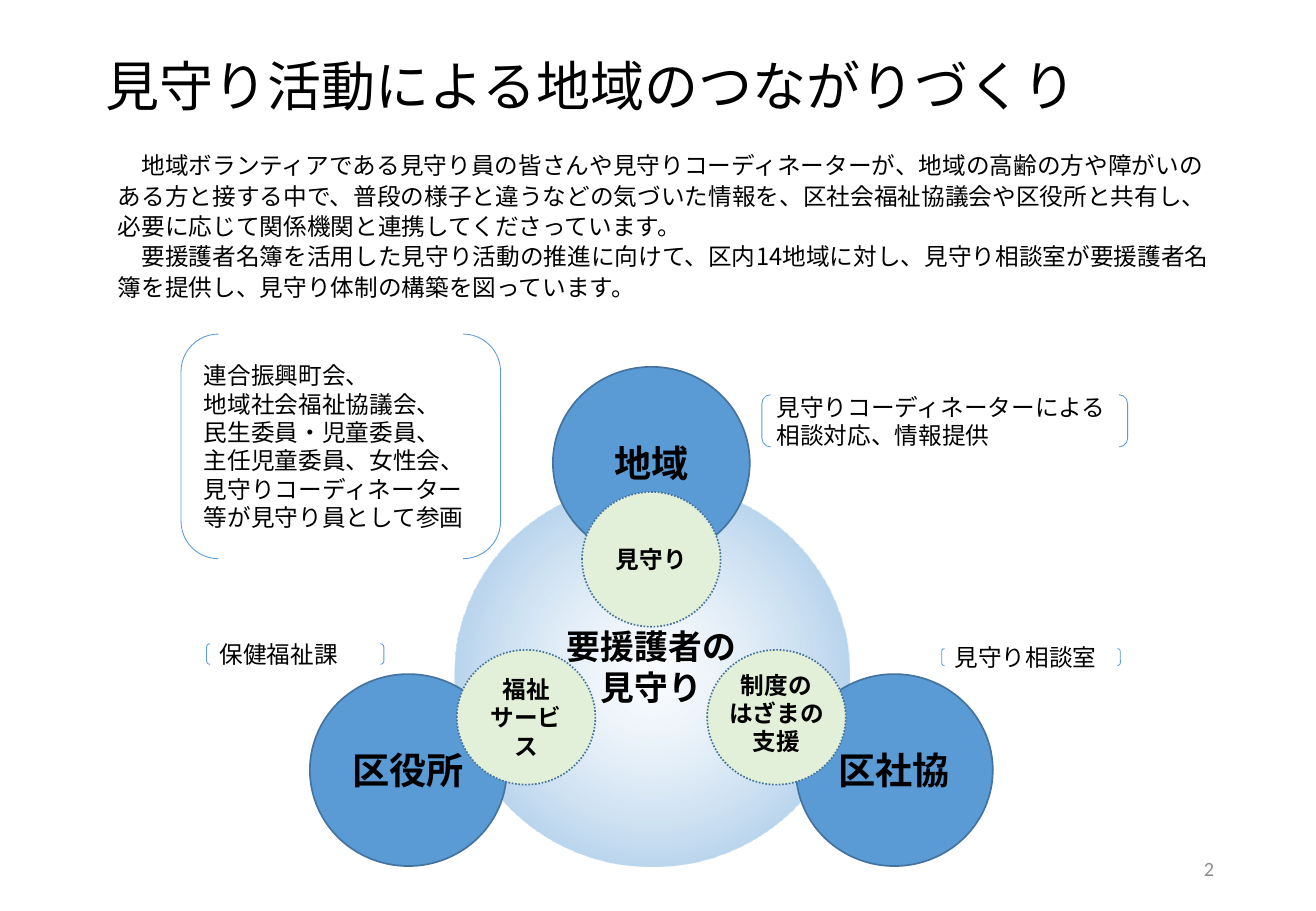
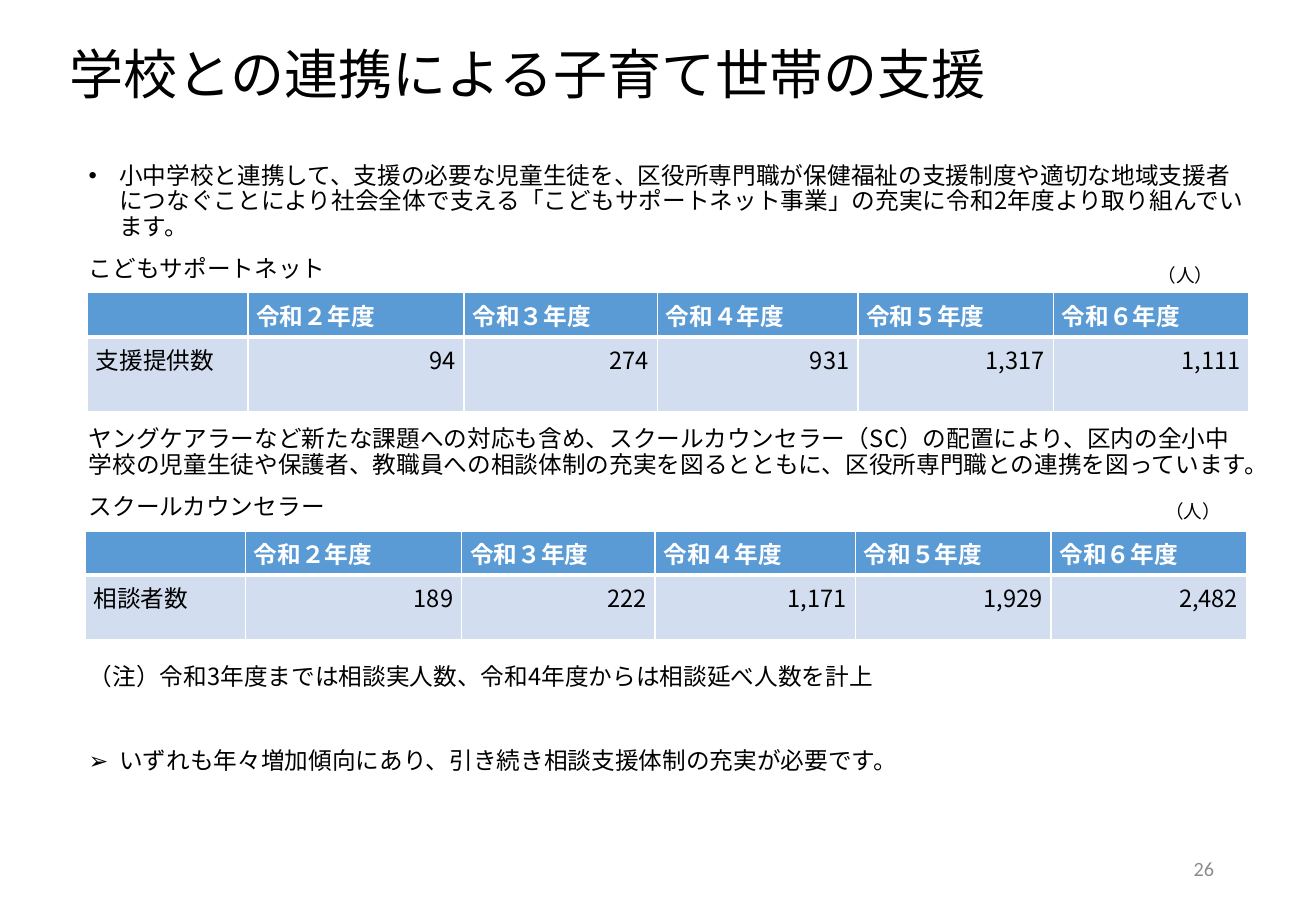
from dataclasses import dataclass

from lxml import etree
from pptx import Presentation
from pptx.dml.color import RGBColor
from pptx.enum.dml import MSO_LINE
from pptx.enum.lang import MSO_LANGUAGE_ID
from pptx.enum.shapes import MSO_SHAPE
from pptx.enum.text import MSO_ANCHOR, MSO_AUTO_SIZE, PP_ALIGN
from pptx.oxml import parse_xml
from pptx.oxml.ns import nsdecls, qn
from pptx.util import Inches, Pt

LEFT, CENTER, RIGHT = PP_ALIGN.LEFT, PP_ALIGN.CENTER, PP_ALIGN.RIGHT
TOP, MIDDLE = MSO_ANCHOR.TOP, MSO_ANCHOR.MIDDLE
ELLIPSE, BRACKETS = MSO_SHAPE.OVAL, MSO_SHAPE.DOUBLE_BRACKET
DOTTED = MSO_LINE.ROUND_DOT
NO_AUTOFIT = MSO_AUTO_SIZE.NONE
JAPANESE = MSO_LANGUAGE_ID.JAPANESE
TITLE_AND_BODY, TITLE_ONLY = 1, 5


@dataclass(frozen=True)
class Theme:
    font: str = "Noto Sans CJK JP"
    number_font: str = "Calibri"
    text: str = "000000"
    muted: str = "8C8C8C"
    white: str = "FFFFFF"
    blue: str = "5B9BD5"
    outline: str = "43739E"
    green: str = "E2F0D9"
    row: str = "D2DEEF"
    title_size: int = 32
    circle_size: int = 22
    center_size: int = 20
    body_size: int = 14
    number_size: int = 12
    unit_size: int = 11


THEME = Theme()


@dataclass(frozen=True)
class TextStyle:
    size: int = THEME.body_size
    color: str = THEME.text
    bold: bool = False
    font: str = THEME.font
    align: PP_ALIGN = LEFT


BODY = TextStyle()
CIRCLE = TextStyle(size=THEME.circle_size, bold=True, align=CENTER)
SMALL_CIRCLE = TextStyle(bold=True, align=CENTER)
CIRCLE_CENTER = TextStyle(size=THEME.center_size, bold=True, align=CENTER)
HEADER = TextStyle(color=THEME.white, bold=True)
VALUE = TextStyle(align=RIGHT)
TITLE = TextStyle(size=THEME.title_size)
UNIT = TextStyle(size=THEME.unit_size)
NUMBER = TextStyle(size=THEME.number_size, color=THEME.muted,
                   font=THEME.number_font, align=RIGHT)


def rgb(color):
    return RGBColor.from_string(color)


def place(shape, box):
    shape.left, shape.top, shape.width, shape.height = map(Inches, box)


def add_run(paragraph, text, style):
    paragraph.alignment = style.align
    run = paragraph.add_run()
    run.text = text
    font = run.font
    font.size, font.bold, font.name = Pt(style.size), style.bold, style.font
    font.color.rgb = rgb(style.color)
    font.language_id = JAPANESE
    east_asian = etree.SubElement(run._r.get_or_add_rPr(), qn("a:ea"))
    east_asian.set("typeface", style.font)


def next_paragraph(frame, index):
    return frame.add_paragraph() if index else frame.paragraphs[0]


def write(frame, lines, style, anchor=MIDDLE, line_spacing=None):
    """Fill a text frame with one paragraph per line."""
    frame.word_wrap = True
    frame.auto_size = NO_AUTOFIT
    frame.vertical_anchor = anchor
    for index, line in enumerate(lines):
        paragraph = next_paragraph(frame, index)
        paragraph.line_spacing = line_spacing
        add_run(paragraph, line, style)


def add_text(shapes, box, lines, style, anchor=TOP, line_spacing=None):
    textbox = shapes.add_textbox(*map(Inches, box))
    write(textbox.text_frame, lines, style, anchor, line_spacing)


def add_plain_shape(shapes, kind, box):
    shape = shapes.add_shape(kind, *map(Inches, box))
    shape.shadow.inherit = False
    return shape


def add_brackets(shapes, box, lines):
    shape = add_plain_shape(shapes, BRACKETS, box)
    shape.fill.background()
    shape.line.color.rgb = rgb(THEME.blue)
    shape.line.width = Pt(0.5)
    write(shape.text_frame, lines, BODY)


def add_circle(shapes, box, fill, lines, style, dash=None):
    shape = add_plain_shape(shapes, ELLIPSE, box)
    shape.fill.solid()
    shape.fill.fore_color.rgb = rgb(fill)
    shape.line.color.rgb = rgb(THEME.outline)
    shape.line.width = Pt(1)
    if dash:
        shape.line.dash_style = dash
    if lines:
        write(shape.text_frame, lines, style)


def add_glow_circle(shapes, box):
    """Add the large circle with a radial gradient that fades in the middle."""
    shape = add_plain_shape(shapes, ELLIPSE, box)
    shape.line.fill.background()
    stops = ((0, "F7FAFD", 50), (74, "B5D2EC", 100),
             (83, "B5D2EC", 100), (100, "CEE1F2", 100))
    stop_xml = "".join(
        f'<a:gs pos="{position * 1000}"><a:srgbClr val="{color}">'
        f'<a:alpha val="{alpha * 1000}"/></a:srgbClr></a:gs>'
        for position, color, alpha in stops)
    gradient = parse_xml(
        f'<a:gradFill {nsdecls("a")}><a:gsLst>{stop_xml}</a:gsLst>'
        '<a:path path="circle"><a:fillToRect l="50000" t="50000" '
        'r="50000" b="50000"/></a:path></a:gradFill>')
    shape._element.spPr.find(qn("a:prstGeom")).addnext(gradient)


def add_slide(presentation, layout, title, title_box, number):
    slide = presentation.slides.add_slide(presentation.slide_layouts[layout])
    place(slide.shapes.title, title_box)
    write(slide.shapes.title.text_frame, [title], TITLE, line_spacing=0.9)
    add_text(slide.shapes, (7.65, 6.95, 2.44, 0.4), [number], NUMBER, MIDDLE)
    return slide


def add_body(placeholder, box, items):
    """Write (text, bullet, space before) items into the body placeholder."""
    place(placeholder, box)
    frame = placeholder.text_frame
    frame.auto_size = NO_AUTOFIT
    for index, (text, bullet, space_before) in enumerate(items):
        paragraph = next_paragraph(frame, index)
        properties = paragraph._p.get_or_add_pPr()
        indent = Inches(0.25) if bullet else 0
        properties.set("marL", str(indent))
        properties.set("indent", str(-indent))
        if bullet:
            etree.SubElement(properties, qn("a:buChar")).set("char", bullet)
        else:
            etree.SubElement(properties, qn("a:buNone"))
        paragraph.line_spacing = 0.9
        paragraph.space_before = Pt(space_before)
        add_run(paragraph, text, BODY)


def set_borders(cell, widths):
    """Draw white borders; widths are left, right, top and bottom in points."""
    properties = cell._tc.get_or_add_tcPr()
    for index, (side, width) in enumerate(zip("LRTB", widths)):
        properties.insert(index, parse_xml(
            f'<a:ln{side} {nsdecls("a")} w="{Pt(width)}"><a:solidFill>'
            f'<a:srgbClr val="{THEME.white}"/></a:solidFill></a:ln{side}>'))


def fill_cell(cell, text, style, fill, borders):
    cell.margin_left = cell.margin_right = Inches(0.07)
    cell.margin_top = cell.margin_bottom = Inches(0.04)
    cell.fill.solid()
    cell.fill.fore_color.rgb = rgb(fill)
    set_borders(cell, borders)
    paragraph = cell.text_frame.paragraphs[0]
    if text:
        add_run(paragraph, text, style)
    else:
        end = etree.SubElement(paragraph._p, qn("a:endParaRPr"))
        end.set("sz", str(style.size * 100))


def add_year_table(shapes, left, top, row_heights, label, values):
    column_widths = (1.32, 1.78, 1.59, 1.65, 1.61, 1.61)
    table = shapes.add_table(
        2, len(column_widths), Inches(left), Inches(top),
        Inches(sum(column_widths)), Inches(sum(row_heights))).table
    table.horz_banding = False
    for column, width in zip(table.columns, column_widths):
        column.width = Inches(width)
    for row, height in zip(table.rows, row_heights):
        row.height = Inches(height)
    headers = [""] + [f"令和{year}年度" for year in "２３４５６"]
    for index, (header, value) in enumerate(zip(headers, [label] + values)):
        fill_cell(table.cell(0, index), header, HEADER, THEME.blue, (1, 1, 1, 3))
        fill_cell(table.cell(1, index), value, VALUE if index else BODY,
                  THEME.row, (1, 1, 3, 1))


def build_watch_slide(presentation):
    slide = add_slide(presentation, TITLE_ONLY,
                      "見守り活動による地域のつながりづくり",
                      (0.77, 0.41, 9.84, 0.64), "2")
    shapes = slide.shapes
    notes = (
        ((1.49, 2.75, 2.63, 1.85),
         ["連合振興町会、", "地域社会福祉協議会、", "民生委員・児童委員、",
          "主任児童委員、女性会、",
          "見守りコーディネーター等が見守り員として参画"]),
        ((6.27, 3.25, 3.01, 0.43),
         ["見守りコーディネーターによる相談対応、情報提供"]),
        ((7.75, 5.34, 1.47, 0.14), ["見守り相談室"]),
        ((1.7, 5.3, 1.46, 0.17), ["保健福祉課"]),
    )
    for box, lines in notes:
        add_brackets(shapes, box, lines)

    diagram = shapes.add_group_shape().shapes
    add_glow_circle(diagram, (3.74, 3.97, 3.25, 3.16))
    partners = (("区役所", 5.55), ("地域", 3.02), ("区社協", 5.55))
    for index, (name, top) in enumerate(partners):
        add_circle(diagram, (2.55 + 2 * index, top, 1.62, 1.58),
                   THEME.blue, [name], CIRCLE)
    roles = ((4.79, 4.05, ["見守り"]), (3.76, 5.35, ["福祉", "サービス"]),
             (5.82, 5.35, []))
    for left, top, lines in roles:
        add_circle(diagram, (left, top, 1.14, 1.11), THEME.green, lines,
                   SMALL_CIRCLE, DOTTED)
    add_text(diagram, (4.55, 5.11, 1.62, 0.75), ["要援護者の見守り"],
             CIRCLE_CENTER, MIDDLE)
    add_text(shapes, (3.89, 5.47, 5, 0.81), ["制度の", "はざまの", "支援"],
             SMALL_CIRCLE)
    add_text(shapes, (0.87, 1.18, 9.22, 1.33), [
        "　地域ボランティアである見守り員の皆さんや見守りコーディネーターが、"
        "地域の高齢の方や障がいのある方と接する中で、普段の様子と違うなどの"
        "気づいた情報を、区社会福祉協議会や区役所と共有し、"
        "必要に応じて関係機関と連携してくださっています。",
        "　要援護者名簿を活用した見守り活動の推進に向けて、区内14地域に対し、"
        "見守り相談室が要援護者名簿を提供し、見守り体制の構築を図っています。",
    ], BODY, line_spacing=Pt(18))


def build_school_slide(presentation):
    slide = add_slide(presentation, TITLE_AND_BODY,
                      "学校との連携による子育て世帯の支援",
                      (0.47, 0.13, 8.62, 1), "26")
    table_gap = 85.5
    add_body(slide.placeholders[1], (0.63, 1.3, 9.73, 5.65), (
        ("小中学校と連携して、支援の必要な児童生徒を、区役所専門職が保健福祉の"
         "支援制度や適切な地域支援者につなぐことにより社会全体で支える"
         "「こどもサポートネット事業」の充実に令和2年度より取り組んでいます。",
         "•", 0),
        ("こどもサポートネット", None, 10),
        ("ヤングケアラーなど新たな課題への対応も含め、スクールカウンセラー（SC）の"
         "配置により、区内の全小中学校の児童生徒や保護者、教職員への相談体制の"
         "充実を図るとともに、区役所専門職との連携を図っています。",
         None, table_gap),
        ("スクールカウンセラー", None, 10),
        ("（注）令和3年度までは相談実人数、令和4年度からは相談延べ人数を計上",
         None, table_gap),
        ("いずれも年々増加傾向にあり、引き続き相談支援体制の充実が必要です。",
         "➢", 35),
    ))
    add_year_table(slide.shapes, 0.72, 2.41, (0.36, 0.62), "支援提供数",
                   ["94", "274", "931", "1,317", "1,111"])
    add_year_table(slide.shapes, 0.7, 4.37, (0.31, 0.53), "相談者数",
                   ["189", "222", "1,171", "1,929", "2,482"])
    for left, top in ((9.43, 2.12), (9.49, 4.07)):
        add_text(slide.shapes, (left, top, 1.04, 0.29), ["（人）"], UNIT)


def main():
    presentation = Presentation()
    presentation.slide_width = Inches(10.83)
    presentation.slide_height = Inches(7.5)
    build_watch_slide(presentation)
    build_school_slide(presentation)
    presentation.save("out.pptx")


if __name__ == "__main__":
    main()
